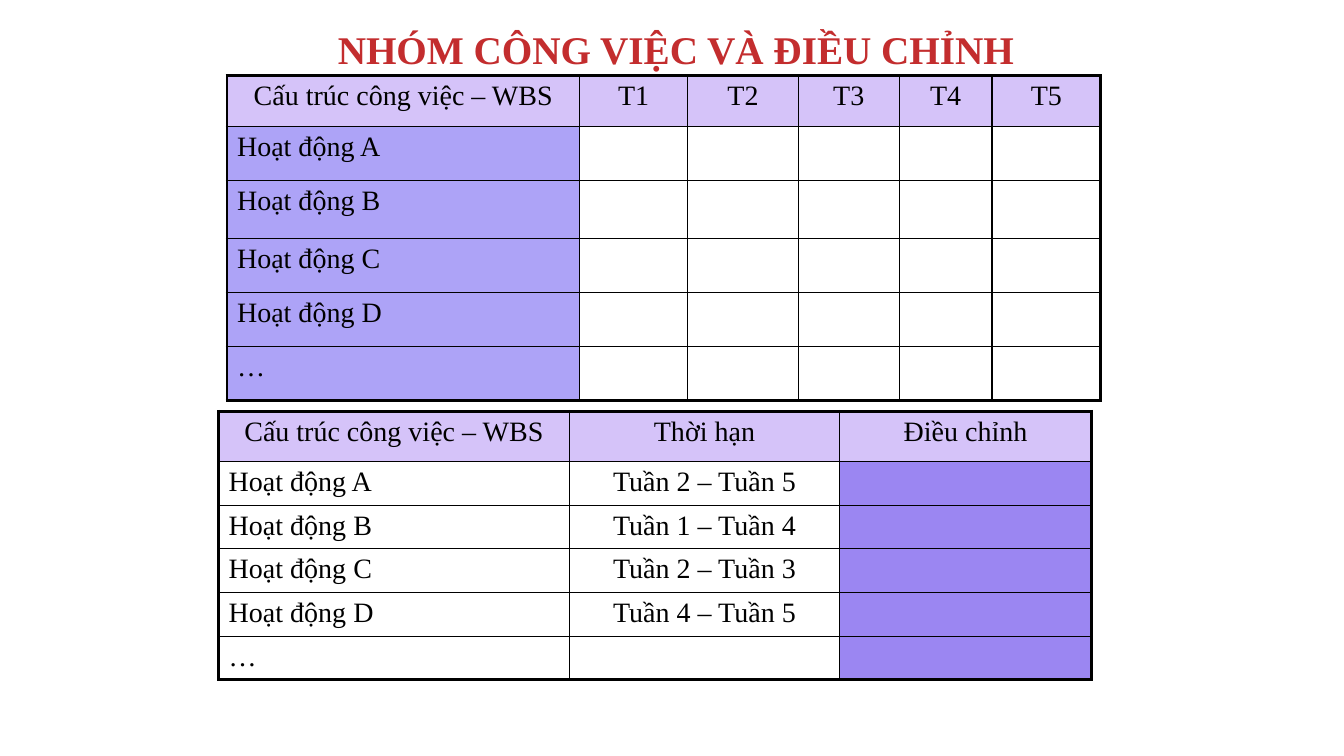
import pptx
import pptx.util
import pptx.dml.color
import pptx.enum.text
import pptx.oxml.ns
import lxml.etree

Cm = pptx.util.Cm
Pt = pptx.util.Pt
ALIGN = pptx.enum.text.PP_ALIGN

COLOURS = {
    "title": "C32D2E",
    "text": "000000",
    "border": "000000",
    "header": "D5C3F9",
    "activity": "ADA3F7",
    "adjustment": "9B86F2",
}
WBS = "Cấu trúc công việc – WBS"
ACTIVITIES = ["Hoạt động A", "Hoạt động B", "Hoạt động C", "Hoạt động D", "…"]
WEEKS = ["T1", "T2", "T3", "T4", "T5"]
DEADLINES = ["Tuần 2 – Tuần 5", "Tuần 1 – Tuần 4", "Tuần 2 – Tuần 3", "Tuần 4 – Tuần 5", ""]


class SlideBuilder:
    font_name = "Times New Roman"
    outer_line = Pt(2.25)
    inner_line = Pt(1)

    def __init__(self, deck):
        self.page = deck.slides.add_slide(deck.slide_layouts[5])

    def colour(self, name):
        return pptx.dml.color.RGBColor.from_string(COLOURS[name])

    def style(self, para, size, colour, align, bold=False):
        para.alignment = align
        para.font.name = self.font_name
        para.font.size = Pt(size)
        para.font.bold = bold
        para.font.color.rgb = self.colour(colour)

    def title(self, text, left, top, width, height):
        box = self.page.shapes.title
        box.left, box.top, box.width, box.height = Cm(left), Cm(top), Cm(width), Cm(height)
        frame = box.text_frame
        frame.text = text
        frame.auto_size = pptx.enum.text.MSO_AUTO_SIZE.NONE
        frame.vertical_anchor = pptx.enum.text.MSO_ANCHOR.TOP
        frame.margin_top = Cm(0.2)
        self.style(frame.paragraphs[0], 28, "title", ALIGN.CENTER, bold=True)

    def borders(self, cell, outer_sides):
        properties = cell._tc.get_or_add_tcPr()
        for side in "LRTB":
            width = self.outer_line if side in outer_sides else self.inner_line
            line = lxml.etree.SubElement(properties, pptx.oxml.ns.qn("a:ln" + side), w=str(width))
            fill = lxml.etree.SubElement(line, pptx.oxml.ns.qn("a:solidFill"))
            lxml.etree.SubElement(fill, pptx.oxml.ns.qn("a:srgbClr"), val=COLOURS["border"])

    def table(self, left, top, widths, heights, rows, column_fills):
        frame = self.page.shapes.add_table(
            len(rows), len(widths), Cm(left), Cm(top), Cm(sum(widths)), Cm(sum(heights)))
        grid = frame.table
        grid.horz_banding = False
        grid.first_row = False
        for column, width in zip(grid.columns, widths):
            column.width = Cm(width)
        for row, height in zip(grid.rows, heights):
            row.height = Cm(height)
        last_row, last_column = len(rows) - 1, len(widths) - 1
        for row_index, texts in enumerate(rows):
            for column_index, text in enumerate(texts):
                cell = grid.cell(row_index, column_index)
                edges = {"L": column_index == 0, "R": column_index == last_column,
                         "T": row_index == 0, "B": row_index == last_row}
                self.borders(cell, [side for side, is_outer in edges.items() if is_outer])
                fill = "header" if row_index == 0 else column_fills.get(column_index)
                if fill:
                    cell.fill.solid()
                    cell.fill.fore_color.rgb = self.colour(fill)
                else:
                    cell.fill.background()
                cell.text = text
                is_activity = row_index > 0 and column_index == 0
                align = ALIGN.JUSTIFY if is_activity else ALIGN.CENTER
                self.style(cell.text_frame.paragraphs[0], 20, "text", align)


def main():
    deck = pptx.Presentation()
    deck.slide_width, deck.slide_height = Cm(33.87), Cm(19.05)
    builder = SlideBuilder(deck)
    builder.title("NHÓM CÔNG VIỆC VÀ ĐIỀU CHỈNH", 8.18, 0.43, 17.7, 1.7)
    deadline_rows = [[activity, deadline, ""] for activity, deadline in zip(ACTIVITIES, DEADLINES)]
    builder.table(
        5.51, 10.36, [8.84, 6.81, 6.35], [1.27] + [1.1] * 5,
        [[WBS, "Thời hạn", "Điều chỉnh"]] + deadline_rows, {2: "adjustment"})
    schedule_rows = [[activity] + [""] * len(WEEKS) for activity in ACTIVITIES]
    builder.table(
        5.72, 1.91, [8.89, 2.72, 2.79, 2.54, 2.34, 2.74], [1.27, 1.36, 1.47, 1.36, 1.36, 1.36],
        [[WBS] + WEEKS] + schedule_rows, {0: "activity"})
    deck.save("out.pptx")


if __name__ == "__main__":
    main()
